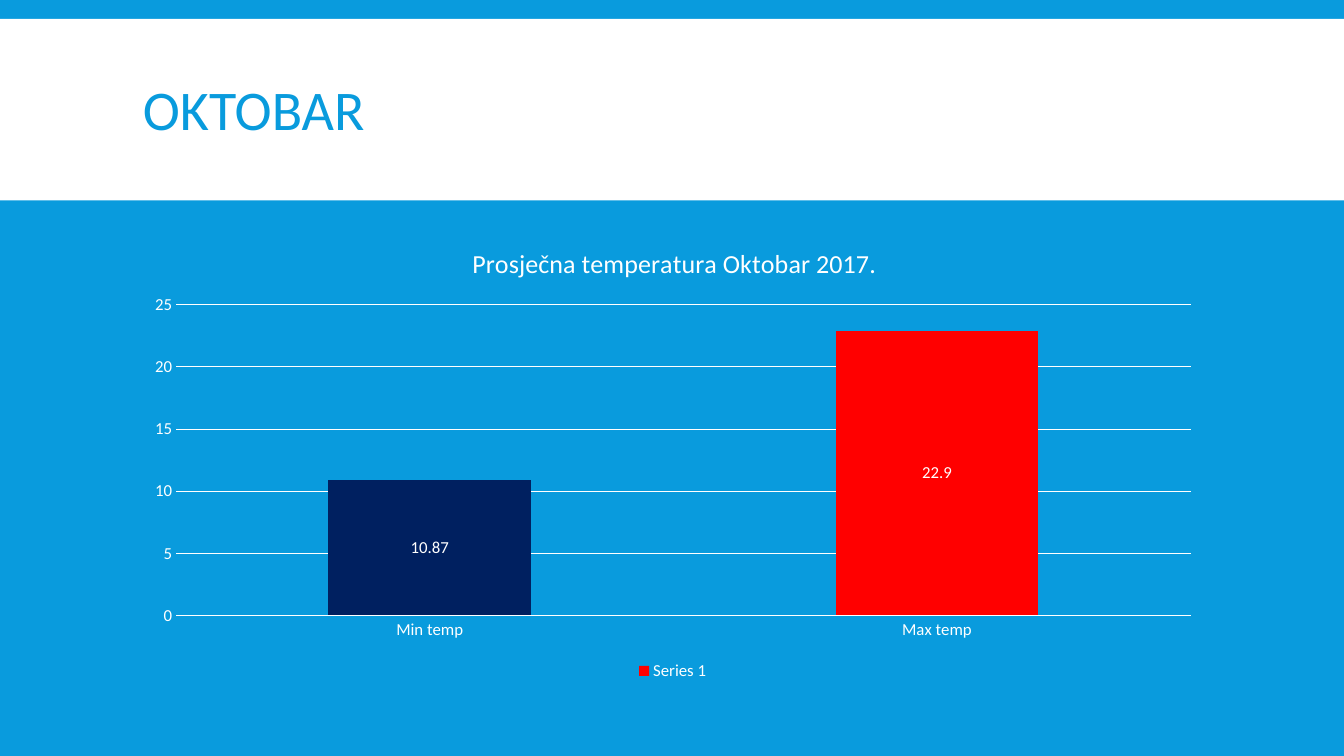
import pptx
import pptx.util
import pptx.chart.data
import pptx.dml.color
import pptx.enum.chart
import pptx.enum.shapes
import pptx.enum.text
import pptx.oxml

WIDE, HIGH = 13.33, 7.5
FONT = "Calibri"
HUES = {"blue": "099BDD", "white": "FFFFFF", "navy": "002060", "red": "FF0000"}


def share(left, top, width, height):
    """Turn shares of the slide into lengths."""
    return [pptx.util.Inches(part * size) for part, size in
            zip((left, top, width, height), (WIDE, HIGH, WIDE, HIGH))]


def paint(fill, hue):
    fill.solid()
    fill.fore_color.rgb = pptx.dml.color.RGBColor.from_string(HUES[hue])


def style(font, size, hue):
    font.name = FONT
    font.size = pptx.util.Pt(size)
    font.bold = False
    font.color.rgb = pptx.dml.color.RGBColor.from_string(HUES[hue])


def add_band(slide, box, hue):
    band = slide.shapes.add_shape(
        pptx.enum.shapes.MSO_SHAPE.RECTANGLE, *share(*box))
    band.shadow.inherit = False
    paint(band.fill, hue)
    band.line.fill.background()


def add_head(slide, box, text):
    frame = slide.shapes.add_textbox(*share(*box)).text_frame
    frame.word_wrap = True
    frame.vertical_anchor = pptx.enum.text.MSO_ANCHOR.MIDDLE
    frame.text = text
    line = frame.paragraphs[0]
    line.line_spacing = 0.85
    style(line.runs[0].font, 40, "blue")


def layout(**parts):
    """Make a fixed chart layout; parts are shares of the chart."""
    names = {"x": "xMode", "y": "yMode"}
    inner = '<c:layoutTarget val="inner"/>' if "w" in parts else ""
    modes = "".join(f'<c:{mode} val="edge"/>' for mode in names.values())
    sizes = "".join(f'<c:{key} val="{val}"/>' for key, val in parts.items())
    space = "http://schemas.openxmlformats.org/drawingml/2006/chart"
    return pptx.oxml.parse_xml(
        f'<c:layout xmlns:c="{space}"><c:manualLayout>{inner}{modes}{sizes}'
        '</c:manualLayout></c:layout>')


def place(node, fixed, after=None):
    for old in node.xpath("./c:layout"):
        node.remove(old)
    if after is None:
        node.insert(0, fixed)
    else:
        node.xpath(after)[0].addnext(fixed)


def style_axis(axis):
    style(axis.tick_labels.font, 12, "white")
    axis.major_tick_mark = pptx.enum.chart.XL_TICK_MARK.NONE
    axis.minor_tick_mark = pptx.enum.chart.XL_TICK_MARK.NONE
    axis.format.line.fill.background()


def add_bars(slide, box, title, name, bars):
    data = pptx.chart.data.CategoryChartData()
    data.categories = list(bars)
    data.add_series(name, bars.values())
    kind = pptx.enum.chart.XL_CHART_TYPE.COLUMN_CLUSTERED
    chart = slide.shapes.add_chart(kind, *share(*box), data).chart
    style(chart.font, 10, "white")

    # Title and plot area
    chart.chart_title.text_frame.text = title
    style(chart.chart_title.text_frame.paragraphs[0].runs[0].font, 18.6, "white")
    place(chart.chart_title._element, layout(x=0.31, y=0.04), "./c:tx")
    area = chart._chartSpace.xpath(".//c:plotArea")[0]
    place(area, layout(x=0.04, y=0.18, w=0.94, h=0.67))

    # Axes
    style_axis(chart.category_axis)
    style_axis(chart.value_axis)
    chart.value_axis.minimum_scale = 0
    chart.value_axis.maximum_scale = 25
    chart.value_axis.major_unit = 5
    grid = chart.value_axis.major_gridlines.format.line
    paint(grid.fill, "white")
    grid.width = pptx.util.Pt(0.75)

    # Legend
    chart.has_legend = True
    chart.legend.position = pptx.enum.chart.XL_LEGEND_POSITION.BOTTOM
    chart.legend.include_in_layout = False
    style(chart.legend.font, 12, "white")

    # Columns and their values
    plot = chart.plots[0]
    plot.gap_width = 150
    plot.vary_by_categories = False
    temps = plot.series[0]
    paint(temps.format.fill, "red")
    paint(temps.points[0].format.fill, "navy")
    labels = temps.data_labels
    labels.show_value = True
    labels.position = pptx.enum.chart.XL_LABEL_POSITION.CENTER
    style(labels.font, 12, "white")


def main():
    deck = pptx.Presentation()
    deck.slide_width = pptx.util.Inches(WIDE)
    deck.slide_height = pptx.util.Inches(HIGH)
    slide = deck.slides.add_slide(deck.slide_layouts[6])
    paint(slide.background.fill, "blue")

    # Heading on a white band
    left, width = 0.099, 0.803
    add_band(slide, (0, 0.025, 1, 0.24), "white")
    add_head(slide, (left, 0.04, width, 0.22), "OKTOBAR")

    # Chart of mean temperatures
    add_bars(slide, (left, 0.293, width, 0.613),
             "Prosječna temperatura Oktobar 2017.", "Series 1",
             {"Min temp": 10.87, "Max temp": 22.9})
    deck.save("out.pptx")


if __name__ == "__main__":
    main()
